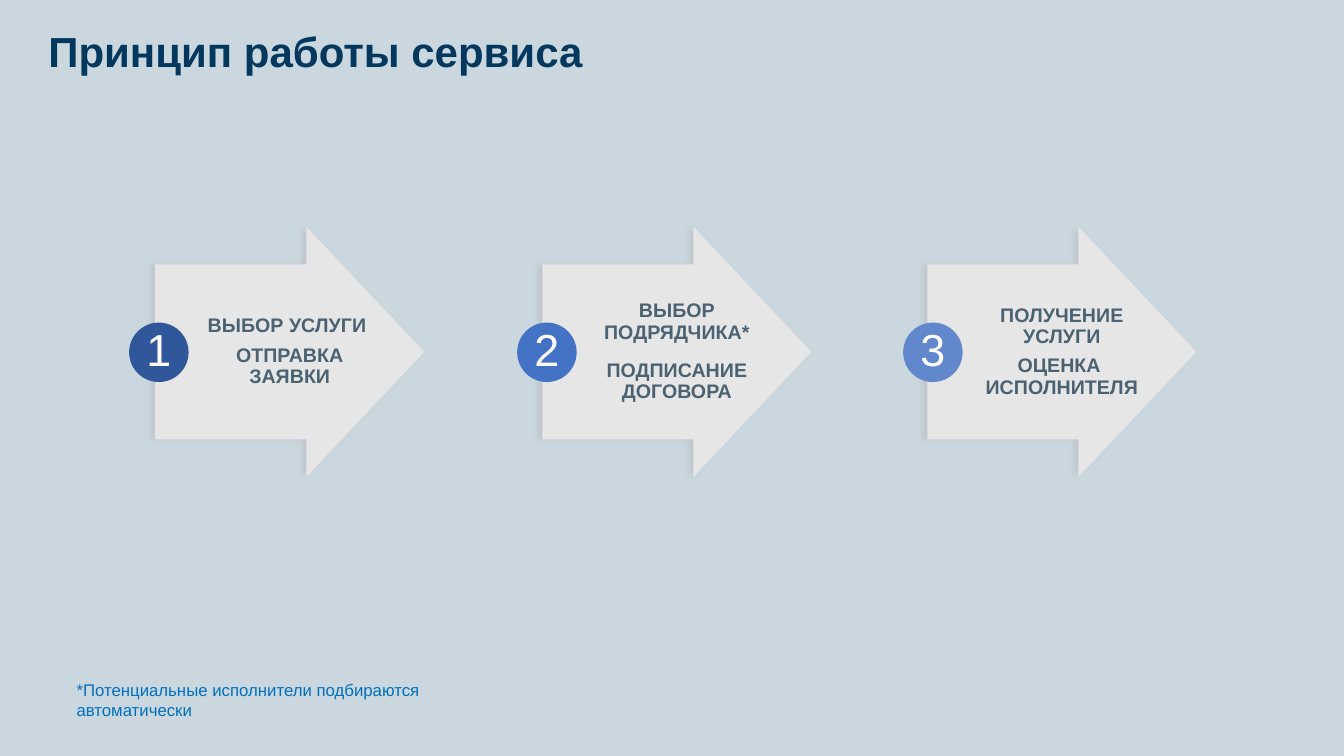
from dataclasses import dataclass

from lxml import etree
from pptx import Presentation
from pptx.dml.color import RGBColor
from pptx.enum import shapes, text
from pptx.oxml import ns
from pptx.util import Pt


@dataclass(frozen=True)
class Theme:
    font: str = "Arial"
    background: str = "CAD7DF"
    title: str = "02375E"
    note: str = "0070C0"
    arrow: str = "E7E6E6"
    shadow: str = "AFABAB"
    label: str = "4A6272"
    number: str = "FFFFFF"
    badges: tuple = ("31579B", "4472C4", "6188CD")
    title_size: int = 30
    note_size: int = 12
    label_size: int = 14
    number_size: int = 32


THEME = Theme()
ARROW_TOP, ARROW_W, ARROW_H = 162, 192.2, 178.6
HEAD_X, SHAFT_INSET = 108, 26.8
BADGE_TOP, BADGE_SIZE = 230.4, 42.5

STEPS = [
    (110.9, 92.2, [("ВЫБОР УСЛУГИ ", 0, 6), ("ОТПРАВКА ЗАЯВКИ", 0, 0)]),
    (387.4, 369.4, [("ВЫБОР ПОДРЯДЧИКА*", 6, 6), ("ПОДПИСАНИЕ ДОГОВОРА", 6, 0)]),
    (662.4, 645.1, [("ПОЛУЧЕНИЕ", 0, 0), ("УСЛУГИ", 0, 6),
                    ("ОЦЕНКА ", 0, 0), ("ИСПОЛНИТЕЛЯ", 0, 0)]),
]


def write(tf, paragraphs, *, size, color, bold=False, align=text.PP_ALIGN.LEFT,
          anchor=text.MSO_ANCHOR.TOP, spacing=1.0, insets=(0, 0), wrap=True):
    tf.word_wrap = wrap
    tf.auto_size = text.MSO_AUTO_SIZE.NONE
    tf.vertical_anchor = anchor
    tf.margin_left = tf.margin_right = Pt(insets[0])
    tf.margin_top = tf.margin_bottom = Pt(insets[1])
    for i, (words, before, after) in enumerate(paragraphs):
        p = tf.add_paragraph() if i else tf.paragraphs[0]
        p.alignment = align
        p.line_spacing = spacing
        p.space_before, p.space_after = Pt(before), Pt(after)
        r = p.add_run()
        r.text = words
        r.font.name = THEME.font
        r.font.size = Pt(size)
        r.font.bold = bold
        r.font.color.rgb = RGBColor.from_string(color)


def paint(sp, color):
    sp.shadow.inherit = False
    sp.fill.solid()
    sp.fill.fore_color.rgb = RGBColor.from_string(color)
    sp.line.fill.background()


def add_left_shadow(sp):
    effects = sp._element.spPr.find(ns.qn("a:effectLst"))
    shadow = etree.SubElement(effects, ns.qn("a:outerShdw"), blurRad=str(Pt(4)),
                              dist=str(Pt(3)), dir="10800000", rotWithShape="0")
    color = etree.SubElement(shadow, ns.qn("a:srgbClr"), val=THEME.shadow)
    etree.SubElement(color, ns.qn("a:alpha"), val="40000")


def add_title(s, words):
    sp = s.shapes.title
    sp.left, sp.top, sp.width, sp.height = Pt(27.4), Pt(16.6), Pt(452.9), Pt(41.8)
    write(sp.text_frame, [(words, 0, 0)], size=THEME.title_size, color=THEME.title,
          bold=True, spacing=Pt(34), insets=(7.2, 3.6))


def add_note(s, words):
    sp = s.shapes.add_textbox(Pt(54.7), Pt(485.3), Pt(326.2), Pt(23))
    write(sp.text_frame, [(words, 0, 0)], size=THEME.note_size, color=THEME.note)


def add_arrow(s, left, paragraphs):
    shaft_bottom = ARROW_H - SHAFT_INSET
    outline = [(0, SHAFT_INSET), (HEAD_X, SHAFT_INSET), (HEAD_X, 0), (ARROW_W, ARROW_H / 2),
               (HEAD_X, ARROW_H), (HEAD_X, shaft_bottom), (0, shaft_bottom)]
    points = [(Pt(left + x), Pt(ARROW_TOP + y)) for x, y in outline]
    builder = s.shapes.build_freeform(*points[0])
    builder.add_line_segments(points[1:], close=True)
    sp = builder.convert_to_shape()
    paint(sp, THEME.arrow)
    add_left_shadow(sp)
    write(sp.text_frame, paragraphs, size=THEME.label_size, color=THEME.label, bold=True,
          align=text.PP_ALIGN.CENTER, anchor=text.MSO_ANCHOR.MIDDLE, spacing=0.9,
          insets=(28, 21.6))


def add_badge(s, left, number, color):
    sp = s.shapes.add_shape(shapes.MSO_SHAPE.OVAL, Pt(left), Pt(BADGE_TOP),
                            Pt(BADGE_SIZE), Pt(BADGE_SIZE))
    paint(sp, color)
    write(sp.text_frame, [(str(number), 0, 0)], size=THEME.number_size, color=THEME.number,
          align=text.PP_ALIGN.CENTER, anchor=text.MSO_ANCHOR.MIDDLE, spacing=0.9, wrap=False)


def main():
    prs = Presentation()
    prs.slide_width, prs.slide_height = Pt(960), Pt(540)
    s = prs.slides.add_slide(prs.slide_layouts[5])
    s.background.fill.solid()
    s.background.fill.fore_color.rgb = RGBColor.from_string(THEME.background)
    add_title(s, "Принцип работы сервиса")
    add_note(s, "*Потенциальные исполнители подбираются автоматически")
    for number, (arrow_left, badge_left, paragraphs) in enumerate(STEPS, 1):
        add_arrow(s, arrow_left, paragraphs)
        add_badge(s, badge_left, number, THEME.badges[number - 1])
    prs.save("out.pptx")


if __name__ == "__main__":
    main()
